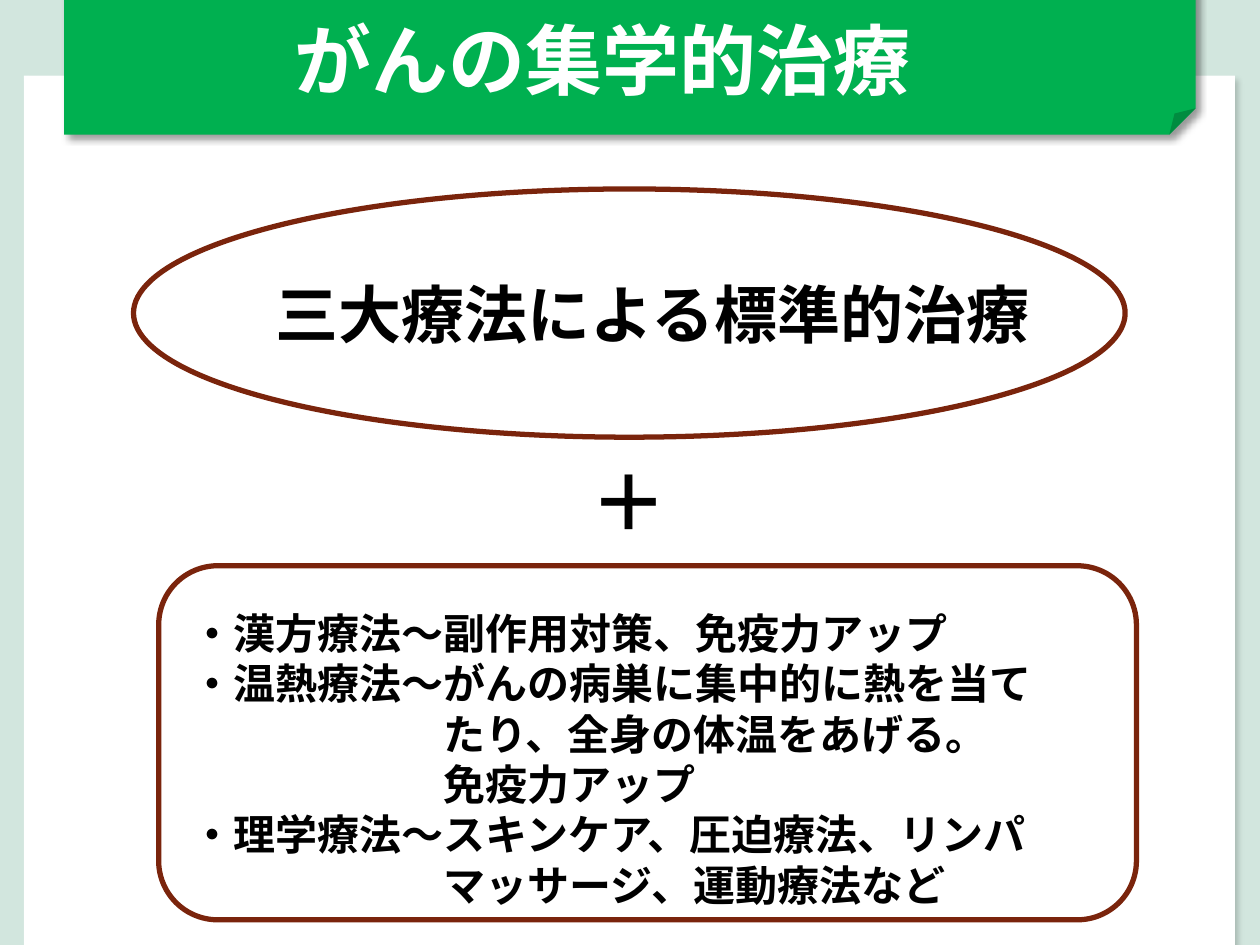
from dataclasses import dataclass

from lxml.etree import SubElement
from pptx import Presentation
from pptx.dml.color import RGBColor
from pptx.enum.shapes import MSO_SHAPE
from pptx.enum.text import MSO_AUTO_SIZE
from pptx.oxml.ns import qn
from pptx.util import Inches, Pt

COLORS = {
    "backdrop": "D2E6DE",
    "page": "FFFFFF",
    "banner": "00B050",
    "frame": "7A240C",
    "text": "000000",
    "title": "FFFFFF",
    "shadow": "000000",
}
BODY_FONT = "TeX Gyre Adventor"
TITLE_FONT = "Noto Sans CJK JP"


@dataclass
class Shadow:
    opacity: int
    blur: float
    distance: float


@dataclass
class Panel:
    kind: MSO_SHAPE
    box: tuple[float, float, float, float]
    fill: str | None = None
    line: str | None = None
    shadow: Shadow | None = None


@dataclass
class Line:
    text: str
    indent: float = 0


@dataclass
class Label:
    box: tuple[float, float, float, float]
    lines: list[Line]
    size: int
    font: str = BODY_FONT
    color: str = "text"
    wrap: bool = True


def rgb(name: str) -> RGBColor:
    return RGBColor.from_string(COLORS[name])


def add_shadow(sp, shadow: Shadow) -> None:
    effects = sp._element.spPr.find(qn("a:effectLst"))
    outer = SubElement(effects, qn("a:outerShdw"), blurRad=str(Pt(shadow.blur)),
                       dist=str(Pt(shadow.distance)), dir=str(45 * 60000),
                       algn="tl", rotWithShape="0")
    color = SubElement(outer, qn("a:srgbClr"), val=COLORS["shadow"])
    SubElement(color, qn("a:alpha"), val=str(shadow.opacity * 1000))


def add_panel(slide, panel: Panel) -> None:
    sp = slide.shapes.add_shape(panel.kind, *map(Inches, panel.box))
    sp.shadow.inherit = False
    if panel.fill:
        sp.fill.solid()
        sp.fill.fore_color.rgb = rgb(panel.fill)
    else:
        sp.fill.background()
    if panel.line:
        sp.line.color.rgb = rgb(panel.line)
        sp.line.width = Pt(3)
    else:
        sp.line.fill.background()
    if panel.shadow:
        add_shadow(sp, panel.shadow)


def add_label(slide, label: Label) -> None:
    tf = slide.shapes.add_textbox(*map(Inches, label.box)).text_frame
    tf.word_wrap = label.wrap
    tf.auto_size = MSO_AUTO_SIZE.SHAPE_TO_FIT_TEXT
    for i, line in enumerate(label.lines):
        p = tf.add_paragraph() if i else tf.paragraphs[0]
        if line.indent:
            p._p.get_or_add_pPr().set("marL", str(Inches(line.indent)))
        r = p.add_run()
        r.text = line.text
        r.font.size = Pt(label.size)
        r.font.bold = True
        r.font.color.rgb = rgb(label.color)
        r.font.name = label.font
        # East Asian text needs its own typeface and language
        rPr = r._r.get_or_add_rPr()
        rPr.set("lang", "ja-JP")
        SubElement(rPr, qn("a:ea"), typeface=label.font)


HANG = 2  # continuation lines start below the text after "～"

PANELS = [
    # White page and green title banner
    Panel(MSO_SHAPE.RECTANGLE, (0.19, 0.6, 9.61, 7.07), fill="page",
          shadow=Shadow(18, 3, 4)),
    Panel(MSO_SHAPE.FOLDED_CORNER, (0.51, -0.19, 8.98, 1.26), fill="banner",
          shadow=Shadow(40, 4, 3)),
    # Frames of the standard and the additional treatments
    Panel(MSO_SHAPE.OVAL, (1.06, 1.5, 7.87, 1.97), line="frame"),
    Panel(MSO_SHAPE.ROUNDED_RECTANGLE, (1.26, 4.49, 7.76, 2.81), line="frame"),
]

LABELS = [
    Label((2.24, 0.05, 5.69, 0.84), [Line("がんの集学的治療")], 44,
          font=TITLE_FONT, color="title"),
    Label((2.09, 2.14, 6.26, 0.71), [Line("三大療法による標準的治療")], 36, wrap=False),
    Label((4.59, 3.56, 0.82, 0.84), [Line("＋")], 44, wrap=False),
    Label((1.42, 4.77, 7.17, 2.52), [
        Line("・漢方療法～副作用対策、免疫力アップ"),
        Line("・温熱療法～がんの病巣に集中的に熱を当て"),
        Line("たり、全身の体温をあげる。", HANG),
        Line("免疫力アップ", HANG),
        Line("・理学療法～スキンケア、圧迫療法、リンパ"),
        Line("マッサージ、運動療法など", HANG),
    ], 24),
]


def main() -> None:
    prs = Presentation()
    prs.slide_width, prs.slide_height = Inches(10), Inches(7.5)
    slide = prs.slides.add_slide(prs.slide_layouts[6])
    slide.background.fill.solid()
    slide.background.fill.fore_color.rgb = rgb("backdrop")
    for panel in PANELS:
        add_panel(slide, panel)
    for label in LABELS:
        add_label(slide, label)
    prs.save("out.pptx")


if __name__ == "__main__":
    main()
